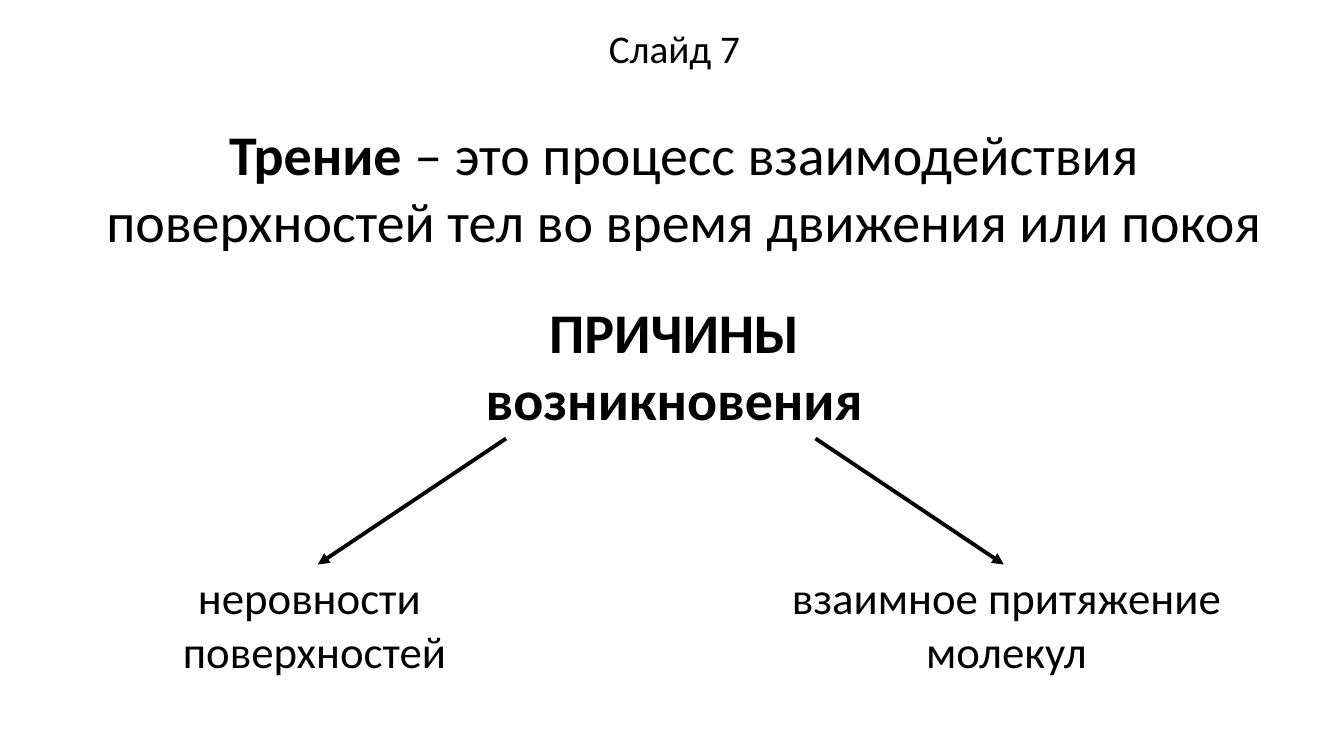
from dataclasses import dataclass

from lxml import etree
from pptx import Presentation
from pptx.dml.color import RGBColor
from pptx.enum.shapes import MSO_CONNECTOR, MSO_SHAPE
from pptx.enum.text import MSO_ANCHOR, MSO_AUTO_SIZE, PP_ALIGN
from pptx.oxml.ns import qn
from pptx.util import Pt

RECTANGLE = MSO_SHAPE.RECTANGLE
STRAIGHT = MSO_CONNECTOR.STRAIGHT
CENTER = PP_ALIGN.CENTER
TOP = MSO_ANCHOR.TOP
GROW = MSO_AUTO_SIZE.SHAPE_TO_FIT_TEXT


@dataclass(frozen=True)
class Theme:
    ink: RGBColor = RGBColor(0, 0, 0)
    paper: RGBColor = RGBColor(255, 255, 255)
    font: str = "Calibri"
    heading: float = 40
    cause: float = 32
    label: float = 28
    arrow: float = 2.75


THEME = Theme()


def add_statement(slide, box, paragraphs, size):
    panel = slide.shapes.add_shape(RECTANGLE, *map(Pt, box))
    panel.shadow.inherit = False
    panel.fill.solid()
    panel.fill.fore_color.rgb = THEME.paper
    panel.line.fill.background()
    frame = panel.text_frame
    layout = {"word_wrap": True, "auto_size": GROW, "vertical_anchor": TOP}
    for attribute, value in layout.items():
        setattr(frame, attribute, value)
    for index, phrases in enumerate(paragraphs):
        paragraph = frame.add_paragraph() if index else frame.paragraphs[0]
        paragraph.alignment = CENTER
        for words, bold in phrases:
            run = paragraph.add_run()
            run.text = words
            style = {"name": THEME.font, "size": Pt(size), "bold": bold}
            for attribute, value in style.items():
                setattr(run.font, attribute, value)
            run.font.color.rgb = THEME.ink


def add_arrow(slide, start, end):
    arrow = slide.shapes.add_connector(STRAIGHT, *map(Pt, start + end))
    arrow.line.color.rgb = THEME.ink
    arrow.line.width = Pt(THEME.arrow)
    etree.SubElement(arrow.line._get_or_add_ln(), qn("a:tailEnd"), type="triangle")
    etree.SubElement(arrow._element.spPr, qn("a:effectLst"))


def add_definition(slide, box):
    phrases = [
        ("Трение", True),
        (" – это процесс взаимодействия поверхностей тел во время движения или покоя", False),
    ]
    add_statement(slide, box, [phrases], THEME.heading)


def add_causes(slide, box):
    left, top, width, height = box
    heading_height, cause_height = 104.4, 85
    arrow_top = top + heading_height
    cause_top = top + height - cause_height
    center = left + 247.5
    add_statement(
        slide,
        (left + 247.5, top, 347, heading_height),
        [[("ПРИЧИНЫ возникновения", True)]],
        THEME.heading,
    )
    roughness = [[("неровности ", False)], [("поверхностей", False)]]
    attraction = [[("взаимное притяжение молекул", False)]]
    attraction_width = 378
    causes = [
        (left, 328.5, roughness),
        (left + width - attraction_width, attraction_width, attraction),
    ]
    for cause_left, cause_width, paragraphs in causes:
        add_statement(
            slide,
            (cause_left, cause_top, cause_width, cause_height),
            paragraphs,
            THEME.cause,
        )
    center = left + 411.5
    for side in (-1, 1):
        add_arrow(
            slide,
            (center + side * 110.5, arrow_top),
            (center + side * 245, cause_top),
        )


def add_slide_label(slide, box):
    add_statement(slide, box, [[("Слайд 7", False)]], THEME.label)


def main():
    deck = Presentation()
    deck.slide_width, deck.slide_height = Pt(960), Pt(540)
    slide = deck.slides.add_slide(deck.slide_layouts[6])
    slide.background.fill.solid()
    slide.background.fill.fore_color.rgb = THEME.paper
    add_definition(slide, (60.5, 81.5, 856, 104.4))
    add_causes(slide, (60.5, 208.8, 847.5, 279.4))
    add_slide_label(slide, (406.8, 13.7, 149.8, 41))
    deck.save("out.pptx")


if __name__ == "__main__":
    main()
